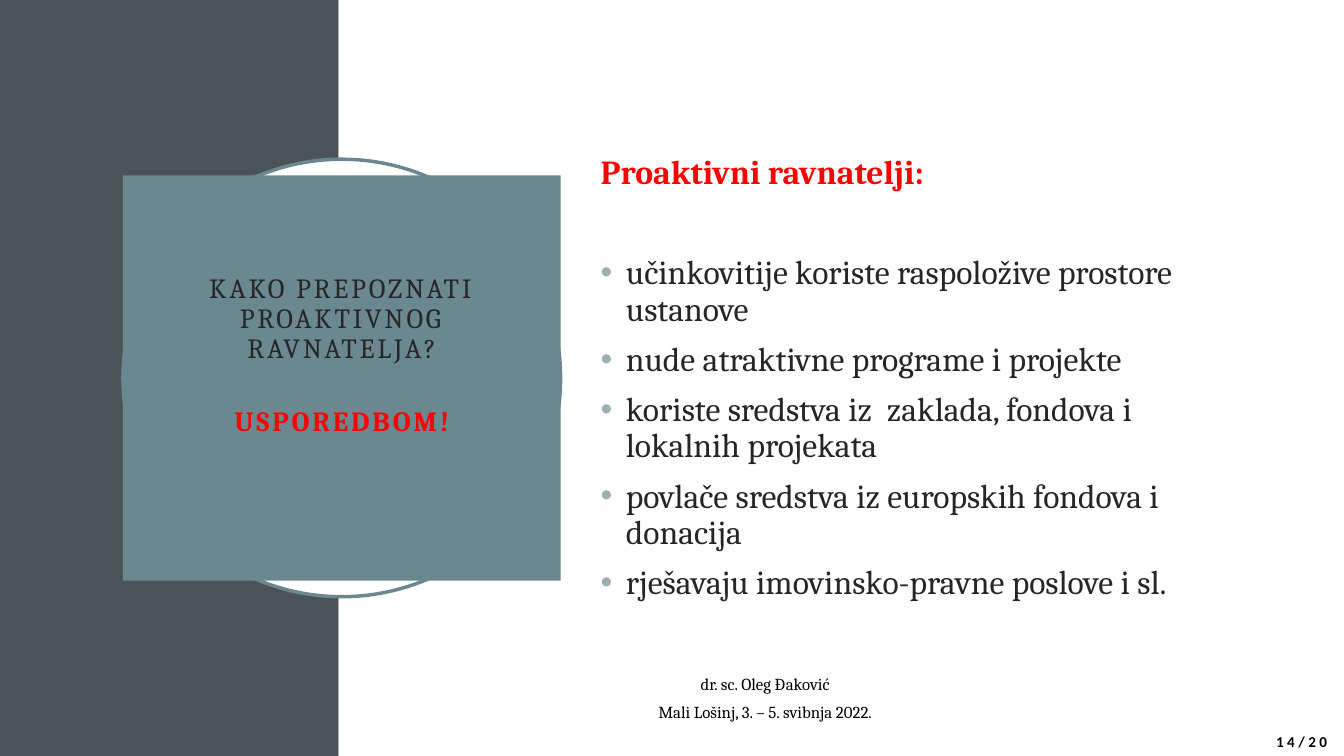
from lxml.etree import SubElement
from pptx import Presentation
from pptx.dml.color import RGBColor
from pptx.enum.shapes import MSO_SHAPE
from pptx.enum.text import MSO_ANCHOR, PP_ALIGN
from pptx.oxml.ns import qn
from pptx.util import Inches, Pt

SLATE, TEAL, WHITE = "4A5356", "6B8891", "FFFFFF"
INK, RED, BLACK, BULLET = "262626", "FF0000", "000000", "9BAFB5"
SERIF, SANS = "Cambria", "Calibri"

TITLE = "KAKO PREPOZNATI PROAKTIVNOG RAVNATELJA?"
ANSWER = "USPOREDBOM!"
HEADING = "Proaktivni ravnatelji:"
PRACTICES = [
    "učinkovitije koriste raspoložive prostore ustanove",
    "nude atraktivne programe i projekte",
    "koriste sredstva iz  zaklada, fondova i lokalnih projekata",
    "povlače sredstva iz europskih fondova i donacija",
    "rješavaju imovinsko-pravne poslove i sl.",
]
FOOTER = ["dr. sc. Oleg Đaković", "Mali Lošinj, 3. – 5. svibnja 2022."]


def color(value):
    return RGBColor.from_string(value)


def add_panel(slide, kind, box, fill, line=None):
    shape = slide.shapes.add_shape(kind, *map(Inches, box))
    shape.shadow.inherit = False
    shape.fill.solid()
    shape.fill.fore_color.rgb = color(fill)
    if line:
        shape.line.color.rgb = color(line)
        shape.line.width = Pt(2.5)
    else:
        shape.line.fill.background()
    return shape


def add_text_box(slide, box):
    frame = slide.shapes.add_textbox(*map(Inches, box)).text_frame
    frame.word_wrap = True
    return frame


def write(frame, text, ink, font, spacing=0, **layout):
    """Fill the empty first paragraph, or append one, and format it."""
    paragraph = frame.paragraphs[0]
    if paragraph.runs:
        paragraph = frame.add_paragraph()
    for name, value in layout.items():
        setattr(paragraph, name, value)
    run = paragraph.add_run()
    run.text = text
    for name, value in font.items():
        setattr(run.font, name, value)
    run.font.color.rgb = color(ink)
    if spacing:
        run.font._element.set("spc", str(int(spacing * 100)))
    return paragraph


def add_bullet(paragraph, indent):
    properties = paragraph._p.get_or_add_pPr()
    properties.set("marL", str(Inches(indent)))
    properties.set("indent", str(-Inches(indent)))
    bullet_color = SubElement(properties, qn("a:buClr"))
    SubElement(bullet_color, qn("a:srgbClr")).set("val", BULLET)
    SubElement(properties, qn("a:buFont")).set("typeface", "Arial")
    SubElement(properties, qn("a:buChar")).set("char", "•")


def add_background(slide, width, height, split):
    add_panel(slide, MSO_SHAPE.RECTANGLE, (0, 0, split, height), SLATE)
    add_panel(slide, MSO_SHAPE.RECTANGLE, (split, 0, width - split, height), WHITE)


def add_title_badge(slide, left, top, size):
    """Place a ring and, across its middle, the block that carries the title."""
    inset = 0.16
    add_panel(slide, MSO_SHAPE.OVAL, (left, top, size, size), WHITE, TEAL)
    block = add_panel(slide, MSO_SHAPE.RECTANGLE,
                      (left, top + inset, size, size - 2 * inset), TEAL)
    frame = block.text_frame
    frame.word_wrap = True
    frame.vertical_anchor = MSO_ANCHOR.TOP
    frame.margin_left = frame.margin_right = Inches(0.6)
    frame.margin_top = Inches(0.98)
    font = {"name": SERIF, "size": Pt(19.8)}
    layout = {"alignment": PP_ALIGN.CENTER, "line_spacing": 0.9}
    write(frame, TITLE, INK, font, 2, **layout)
    write(frame, ANSWER, RED, font | {"bold": True}, 2,
          space_before=Pt(31), **layout)


def add_practices(slide, box):
    frame = add_text_box(slide, box)
    font = {"name": SERIF, "size": Pt(24)}
    write(frame, HEADING, RED, font | {"bold": True}, line_spacing=0.9)
    for number, practice in enumerate(PRACTICES):
        paragraph = write(frame, practice, INK, font, line_spacing=0.9,
                          space_before=Pt(10 if number else 46))
        add_bullet(paragraph, 0.25)


def add_footer(slide, box):
    frame = add_text_box(slide, box)
    for line in FOOTER:
        write(frame, line, BLACK, {"name": SERIF, "size": Pt(12)},
              alignment=PP_ALIGN.CENTER, space_after=Pt(6))


def add_page_number(slide, box):
    write(add_text_box(slide, box), "14/20", BLACK,
          {"name": SANS, "size": Pt(10.8), "bold": True}, 2.5,
          alignment=PP_ALIGN.CENTER, line_spacing=0.8)


def main():
    width, height = 13.33, 7.5
    presentation = Presentation()
    presentation.slide_width = Inches(width)
    presentation.slide_height = Inches(height)
    slide = presentation.slides.add_slide(presentation.slide_layouts[6])
    add_background(slide, width, height, 3.36)
    add_title_badge(slide, 1.22, 1.58, 4.34)
    add_practices(slide, (5.86, 1.49, 6.07, 4.6))
    add_page_number(slide, (12.48, 7.25, 0.86, 0.25))
    add_footer(slide, (5.86, 6.63, 3.46, 0.59))
    presentation.save("out.pptx")


if __name__ == "__main__":
    main()
